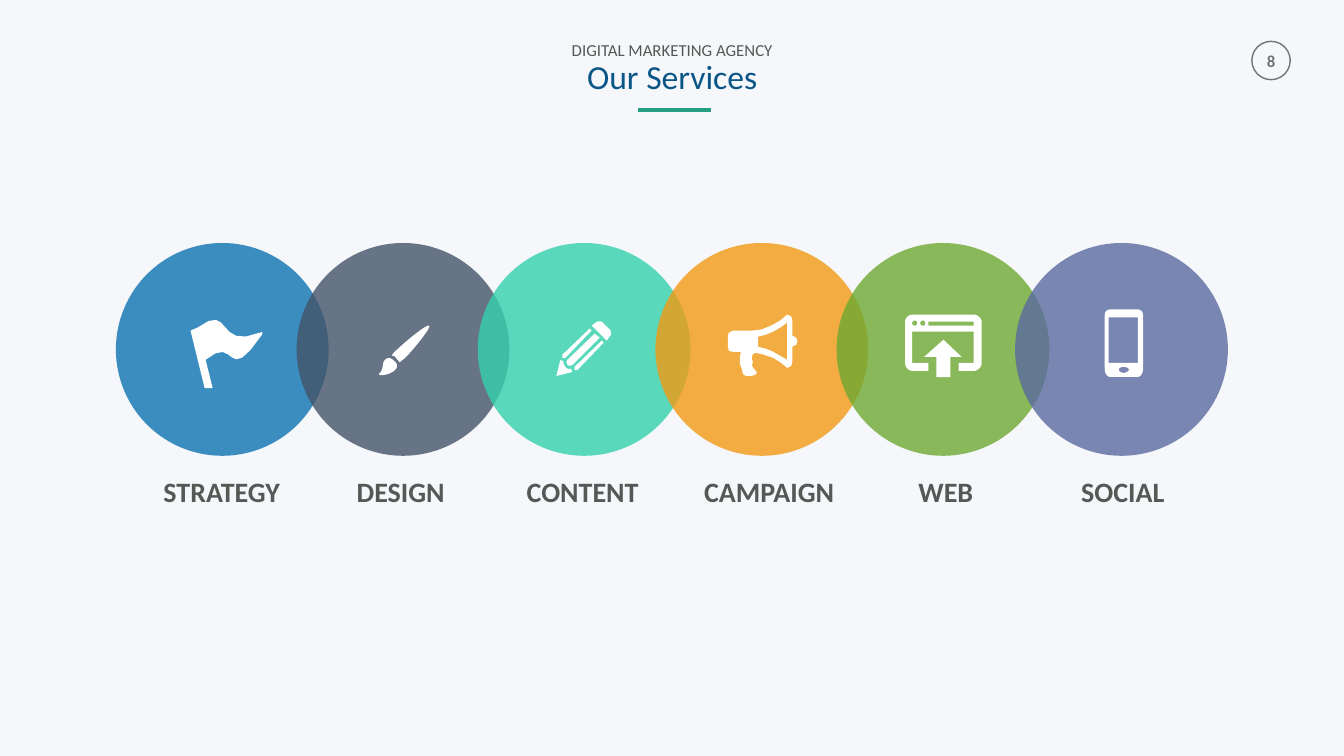
from dataclasses import dataclass

from lxml import etree
from pptx import Presentation
from pptx.dml.color import RGBColor
from pptx.enum.shapes import MSO_CONNECTOR, MSO_SHAPE
from pptx.enum.text import MSO_ANCHOR, MSO_AUTO_SIZE, PP_ALIGN
from pptx.oxml.ns import qn
from pptx.util import Pt

OVAL = MSO_SHAPE.OVAL
STRAIGHT = MSO_CONNECTOR.STRAIGHT
CENTER = PP_ALIGN.CENTER
TITLE_ONLY = 5
GRID = 0.72
CURVE_STEPS = 8


@dataclass(frozen=True)
class Theme:
    """Colours, font and type sizes of the slide."""
    font: str = "Calibri"
    background: str = "F6F7FA"
    text: str = "565856"
    title: str = "0A5686"
    rule: str = "249F83"
    number: str = "737572"
    icon: str = "FFFFFF"
    small: int = 12
    label: int = 20
    heading: int = 24
    opacity: int = 80


@dataclass(frozen=True)
class Service:
    """One circle with its label and icon contours."""
    name: str
    color: str
    left: float
    label_center: float
    label_width: float
    icon: list


THEME = Theme()
CIRCLE_TOP, CIRCLE_SIZE = 173.6, 152
LABEL_TOP, LABEL_HEIGHT = 335.5, 31.5

FLAG = [[(258, 330), (213, 348, 231, 299, 196, 325), (189, 328), (203, 385), (211, 385),
         (204, 357), (236, 330, 223, 386, 260, 332), (261, 330, 260, 329, 258, 330)]]
BRUSH = [
    [(382, 357), (378, 361, 382, 365, 376, 371), (374, 373, 386, 373, 392, 367),
     (395, 364, 394, 360, 391, 358), (388, 355, 385, 354, 382, 357)],
    [(426, 323), (424, 321, 402, 339, 395, 346), (391, 349, 390, 351, 389, 352),
     (389, 353, 389, 353, 390, 353), (391, 353, 392, 354, 393, 355),
     (394, 357, 395, 357, 396, 359), (396, 359, 396, 360, 397, 359),
     (398, 358, 400, 357, 403, 354), (410, 347, 428, 325, 426, 323)]]
PENCIL = [
    [(604, 335), (602, 338), (587, 323), (590, 321), (592, 318, 597, 318, 599, 321),
     (604, 326), (607, 328, 607, 333, 604, 335)],
    [(570, 364), (570, 365, 570, 366, 570, 367), (571, 367, 572, 367, 573, 367),
     (599, 340), (597, 338)],
    [(558, 352), (558, 353, 558, 354, 558, 355), (559, 355, 560, 355, 561, 355),
     (587, 328), (585, 326)],
    [(590, 331), (563, 357), (562, 358, 562, 360, 563, 362),
     (564, 363, 567, 363, 568, 362), (595, 335)],
    [(568, 369), (567, 368, 567, 367, 567, 366), (566, 366),
     (564, 366, 562, 366, 561, 364), (560, 363, 559, 361, 559, 359), (559, 358),
     (558, 358, 557, 358, 556, 357), (552, 373)]]
MEGAPHONE = [
    [(791, 339), (790, 342), (786, 344), (786, 359), (785, 363), (781, 365), (775, 360),
     (767, 355), (758, 352), (750, 350), (747, 351), (746, 354), (746, 357), (747, 359),
     (746, 362), (747, 365), (749, 367), (751, 370), (749, 372), (745, 373), (740, 373),
     (737, 371), (736, 366), (734, 361), (734, 355), (735, 349), (727, 349), (723, 348),
     (722, 343), (722, 334), (723, 330), (727, 328), (746, 328), (755, 327), (765, 323),
     (774, 318), (781, 312), (785, 314), (786, 318), (786, 333), (790, 335)],
    [(781, 320), (774, 325), (767, 329), (760, 332), (752, 334), (752, 344), (760, 346),
     (767, 349), (774, 353), (781, 357)]]
BROWSER = [
    [(966, 312), (906, 312), (901, 312, 898, 316, 898, 319), (898, 360),
     (898, 364, 901, 368, 906, 368), (921, 368), (921, 360), (905, 360), (905, 329),
     (966, 329), (966, 360), (951, 360), (951, 368), (966, 368),
     (970, 368, 974, 364, 974, 360), (974, 319), (974, 316, 970, 312, 966, 312)],
    *([(x, 323), (x - 2, 323, x - 3, 322, x - 3, 321), (x - 3, 319, x - 2, 318, x, 318),
       (x + 1, 318, x + 2, 319, x + 2, 321), (x + 2, 322, x + 1, 323, x, 323)]
      for x in (908, 916)),
    [(966, 323), (921, 323), (921, 319), (966, 319)],
    [(936, 337), (917, 354), (929, 354), (929, 374), (943, 374), (943, 354), (954, 354)]]
PHONE = [
    [(1128, 307), (1102, 307), (1098, 307, 1096, 309, 1096, 313), (1096, 366),
     (1096, 370, 1098, 374, 1102, 374), (1128, 374), (1132, 374, 1134, 370, 1134, 366),
     (1134, 313), (1134, 309, 1132, 307, 1128, 307)],
    [(1115, 370), (1112, 370, 1110, 368, 1110, 367), (1110, 365, 1112, 364, 1115, 364),
     (1117, 364, 1120, 365, 1120, 367), (1120, 368, 1117, 370, 1115, 370)],
    [(1129, 360), (1100, 360), (1100, 315), (1129, 315)]]

SERVICES = [
    Service("STRATEGY", "0D73B2", 82.8, 158.4, 101, FLAG),
    Service("DESIGN", "445468", 211.9, 286.2, 78.5, BRUSH),
    Service("CONTENT", "33D1AD", 341.3, 416.2, 95, PENCIL),
    Service("CAMPAIGN", "F19A14", 468.2, 549.4, 109.5, MEGAPHONE),
    Service("WEB", "6DA931", 597.6, 675.6, 54, BROWSER),
    Service("SOCIAL", "596A9F", 725.1, 802.1, 75, PHONE),
]


def apply_format(target, values):
    """Set each named attribute of the target."""
    for name, value in values.items():
        setattr(target, name, value)


def write_lines(box, lines, spacing=1.0):
    """Fill a box with centred lines of (text, size, colour, bold)."""
    frame = box.text_frame
    apply_format(frame, {"word_wrap": False, "auto_size": MSO_AUTO_SIZE.SHAPE_TO_FIT_TEXT,
                         "vertical_anchor": MSO_ANCHOR.TOP})
    for index, (text, size, color, bold) in enumerate(lines):
        para = frame.add_paragraph() if index else frame.paragraphs[0]
        apply_format(para, {"alignment": CENTER, "line_spacing": spacing,
                            "space_before": Pt(0)})
        span = para.add_run()
        span.text = text
        apply_format(span.font, {"name": THEME.font, "size": Pt(size), "bold": bold})
        span.font.color.rgb = RGBColor.from_string(color)


def add_label(page, bounds, line):
    """Add a one-line text box."""
    write_lines(page.shapes.add_textbox(*map(Pt, bounds)), [line])


def fill_plain(shape, color):
    """Give a shape a solid fill with no line or shadow."""
    shape.shadow.inherit = False
    shape.fill.solid()
    shape.fill.fore_color.rgb = RGBColor.from_string(color)
    shape.line.fill.background()


def add_title(page):
    """Place the heading and the rule below it."""
    title = page.shapes.title
    apply_format(title, {"left": Pt(401), "top": Pt(26.6),
                         "width": Pt(158.4), "height": Pt(46.8)})
    write_lines(title, [("DIGITAL MARKETING AGENCY", THEME.small, THEME.text, False),
                        ("Our Services", THEME.heading, THEME.title, False)], 0.9)
    rule = page.shapes.add_connector(STRAIGHT, Pt(507.6), Pt(78.5), Pt(455.8), Pt(78.5))
    rule.line.color.rgb = RGBColor.from_string(THEME.rule)
    rule.line.width = Pt(3)
    etree.SubElement(rule.element.spPr, qn("a:effectLst"))


def add_page_number(page):
    """Draw the ringed page number."""
    add_label(page, (893.5, 32.4, 28.8, 21.6), ("8", THEME.small, THEME.number, True))
    ring = page.shapes.add_shape(OVAL, Pt(894.2), Pt(29.5), Pt(27.4), Pt(27.4))
    ring.shadow.inherit = False
    ring.fill.background()
    ring.line.color.rgb = RGBColor.from_string(THEME.number)
    ring.line.width = Pt(1)


def add_circle(page, service):
    """Draw the translucent circle of a service."""
    circle = page.shapes.add_shape(OVAL, Pt(service.left), Pt(CIRCLE_TOP),
                                   Pt(CIRCLE_SIZE), Pt(CIRCLE_SIZE))
    fill_plain(circle, service.color)
    color = circle.element.spPr.find(qn("a:solidFill")).find(qn("a:srgbClr"))
    etree.SubElement(color, qn("a:alpha"), val=str(THEME.opacity * 1000))


def flatten(contour):
    """Turn point pairs and cubic curves into a list of scaled points."""
    points = [contour[0]]
    for step in contour[1:]:
        if len(step) == 2:
            points.append(step)
            continue
        corners = (points[-1], step[:2], step[2:4], step[4:])
        for index in range(1, CURVE_STEPS + 1):
            t = index / CURVE_STEPS
            weights = ((1 - t) ** 3, 3 * t * (1 - t) ** 2, 3 * t * t * (1 - t), t ** 3)
            points.append(tuple(sum(weight * corner[axis] for weight, corner
                                    in zip(weights, corners)) for axis in (0, 1)))
    return [(Pt(x * GRID), Pt(y * GRID)) for x, y in points]


def add_icon(page, contours):
    """Draw an icon as one freeform with holes."""
    outlines = [flatten(contour) for contour in contours]
    builder = page.shapes.build_freeform(*outlines[0][0])
    for index, outline in enumerate(outlines):
        if index:
            builder.move_to(*outline[0])
        builder.add_line_segments(outline[1:], close=True)
    fill_plain(builder.convert_to_shape(), THEME.icon)


def main():
    """Build and save the slide."""
    deck = Presentation()
    apply_format(deck, {"slide_width": Pt(960), "slide_height": Pt(540)})
    page = deck.slides.add_slide(deck.slide_layouts[TITLE_ONLY])
    page.background.fill.solid()
    page.background.fill.fore_color.rgb = RGBColor.from_string(THEME.background)
    add_page_number(page)
    add_title(page)
    for service in SERVICES:
        add_circle(page, service)
    for service in SERVICES:
        left = service.label_center - service.label_width / 2
        add_label(page, (left, LABEL_TOP, service.label_width, LABEL_HEIGHT),
                  (service.name, THEME.label, THEME.text, True))
        add_icon(page, service.icon)
    deck.save("out.pptx")


if __name__ == "__main__":
    main()
